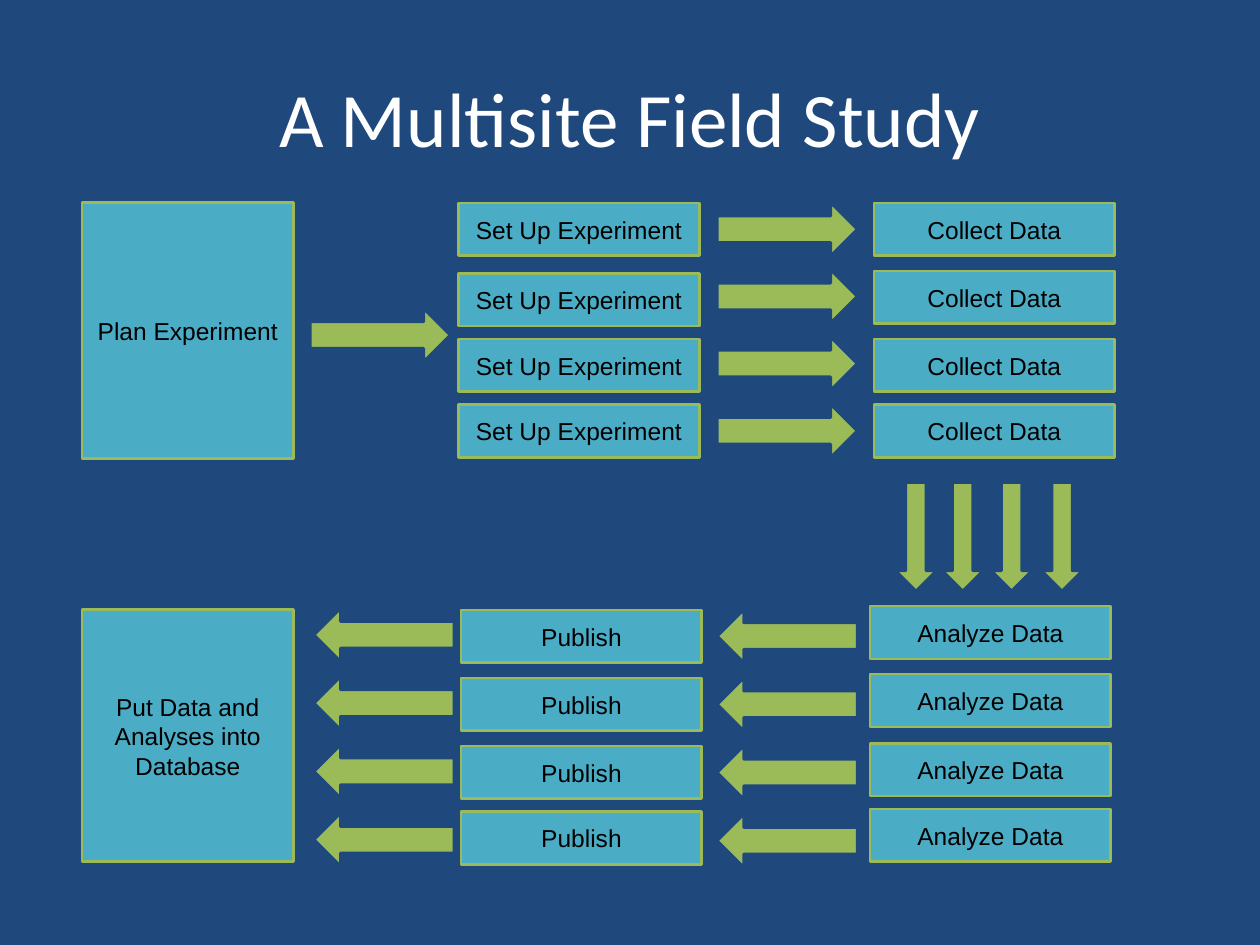
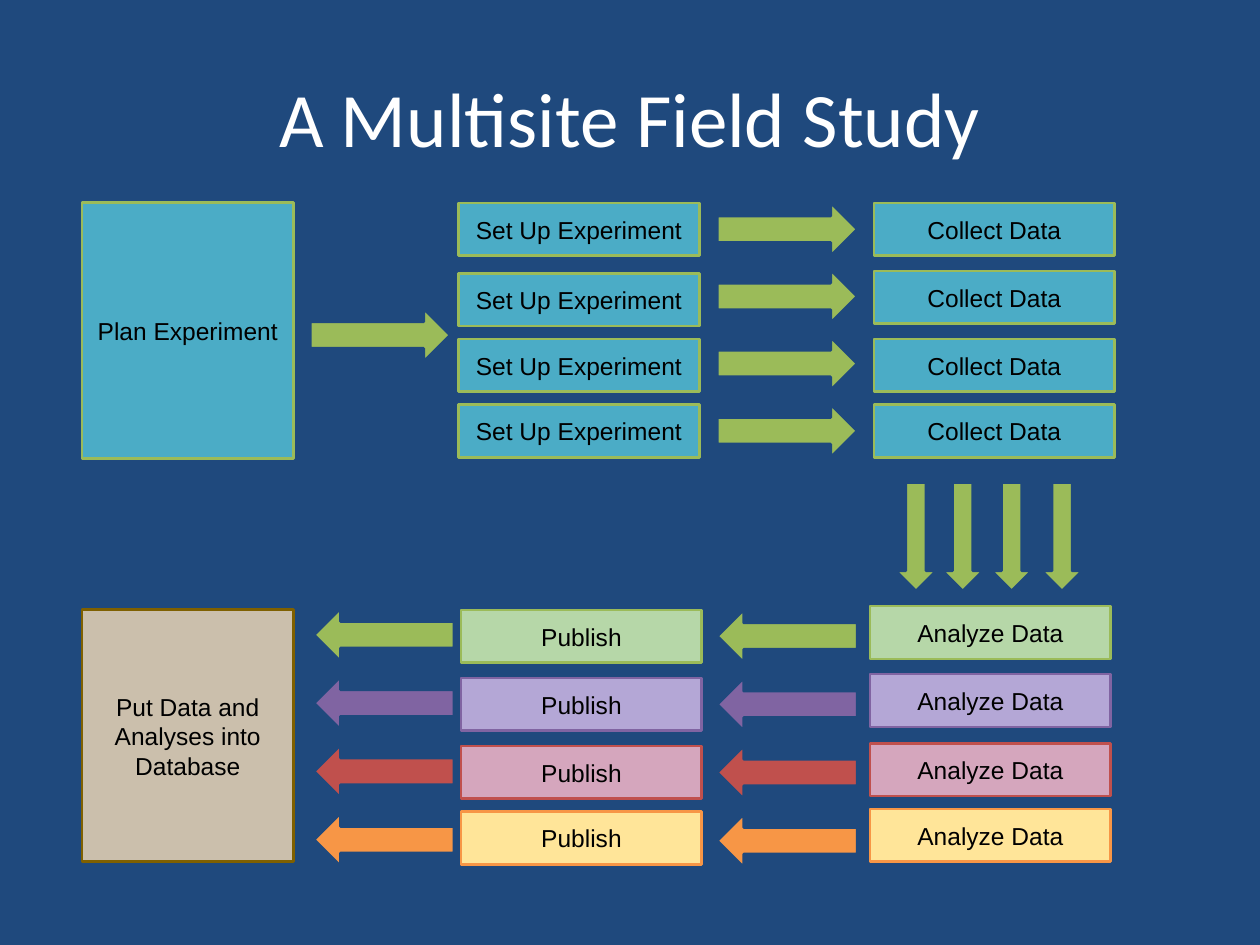
from pptx import Presentation
from pptx.dml.color import RGBColor
from pptx.enum.shapes import MSO_SHAPE
from pptx.enum.text import MSO_ANCHOR, PP_ALIGN
from pptx.util import Pt

NAVY, WHITE, BLACK = "1F497D", "FFFFFF", "000000"
TEAL, GREEN = "4BACC6", "9BBB59"

STEP_SIZE = (137.5, 30.2)
ARROW_SIZE = (79.9, 30.2)
DOWN_ARROW_SIZE = (23, 61.9)

SET_UP_TOPS = (115.9, 156.2, 193.7, 231.1)
COLLECT_TOPS = (115.9, 154.8, 193.7, 231.1)
ANALYZE_TOPS = (346.3, 385.2, 424.8, 462.2)
PUBLISH_TOPS = (348.5, 387.4, 426.2, 463.7)
OUTWARD_ARROW_TOPS = [115.9 + 38.4 * site for site in range(4)]
RETURN_ARROW_TOPS = [348.4 + 39 * site for site in range(4)]
DOWN_ARROW_LEFTS = (511.9, 538.6, 566.6, 595.4)

UNIFORM_SITES = [(TEAL, GREEN)] * 4
COLOURED_SITES = [
    ("B6D7A8", GREEN),
    ("B4A7D6", "8064A2"),
    ("D5A6BD", "C0504D"),
    ("FFE599", "F79646"),
]


def colour(value):
    return RGBColor.from_string(value)


class StudyDeck:
    def __init__(self):
        self.presentation = Presentation()
        self.presentation.slide_width = Pt(720)
        self.presentation.slide_height = Pt(540)
        self.slide = None

    def add_slide(self, title):
        self.slide = self.presentation.slides.add_slide(self.presentation.slide_layouts[6])
        background = self.slide.background.fill
        background.solid()
        background.fore_color.rgb = colour(NAVY)
        box = self.slide.shapes.add_textbox(Pt(36), Pt(21.6), Pt(648), Pt(90))
        self.label(box, title, "Calibri", 44, WHITE)

    def label(self, shape, text, font_name, size, text_colour):
        frame = shape.text_frame
        frame.word_wrap = True
        frame.vertical_anchor = MSO_ANCHOR.MIDDLE
        frame.margin_left = frame.margin_right = Pt(7.2)
        frame.margin_top = frame.margin_bottom = Pt(7.2)
        paragraph = frame.paragraphs[0]
        paragraph.alignment = PP_ALIGN.CENTER
        run = paragraph.add_run()
        run.text = text
        run.font.name = font_name
        run.font.size = Pt(size)
        run.font.color.rgb = colour(text_colour)

    def shape(self, kind, left, top, size, fill, line):
        width, height = size
        shape = self.slide.shapes.add_shape(kind, Pt(left), Pt(top), Pt(width), Pt(height))
        shape.shadow.inherit = False
        shape.fill.solid()
        shape.fill.fore_color.rgb = colour(fill)
        shape.line.color.rgb = colour(line)
        shape.line.width = Pt(1.5)
        return shape

    def step(self, text, left, top, size=STEP_SIZE, fill=TEAL, line=GREEN):
        shape = self.shape(MSO_SHAPE.RECTANGLE, left, top, size, fill, line)
        self.label(shape, text, "Arial", 14, BLACK)

    def arrow(self, kind, left, top, size=ARROW_SIZE, fill=GREEN):
        self.shape(kind, left, top, size, fill, NAVY)

    def study(self, sites, database_fill, database_line):
        self.add_slide("A Multisite Field Study")
        self.step("Plan Experiment", 46.8, 115.9, (121, 146.2))
        self.arrow(MSO_SHAPE.RIGHT_ARROW, 177.3, 176.4)
        for top in SET_UP_TOPS:
            self.step("Set Up Experiment", 262.1, top)
        for top in OUTWARD_ARROW_TOPS:
            self.arrow(MSO_SHAPE.RIGHT_ARROW, 409.9, top)
        for top in COLLECT_TOPS:
            self.step("Collect Data", 499.4, top)
        for left in DOWN_ARROW_LEFTS:
            self.arrow(MSO_SHAPE.DOWN_ARROW, left, 275.8, DOWN_ARROW_SIZE)
        rows = zip(sites, ANALYZE_TOPS, PUBLISH_TOPS, RETURN_ARROW_TOPS)
        for (fill, accent), analyze_top, publish_top, arrow_top in rows:
            self.step("Analyze Data", 497.2, analyze_top, fill=fill, line=accent)
            self.arrow(MSO_SHAPE.LEFT_ARROW, 409.9, arrow_top, fill=accent)
            self.step("Publish", 263.5, publish_top, fill=fill, line=accent)
            self.arrow(MSO_SHAPE.LEFT_ARROW, 179.5, arrow_top - 0.7, fill=accent)
        self.step("Put Data and Analyses into Database", 46.8, 348.5, (121, 144),
                  database_fill, database_line)


def main():
    deck = StudyDeck()
    deck.study(UNIFORM_SITES, TEAL, GREEN)
    deck.study(COLOURED_SITES, "CBBFAC", "7F6000")
    deck.presentation.save("out.pptx")


if __name__ == "__main__":
    main()
